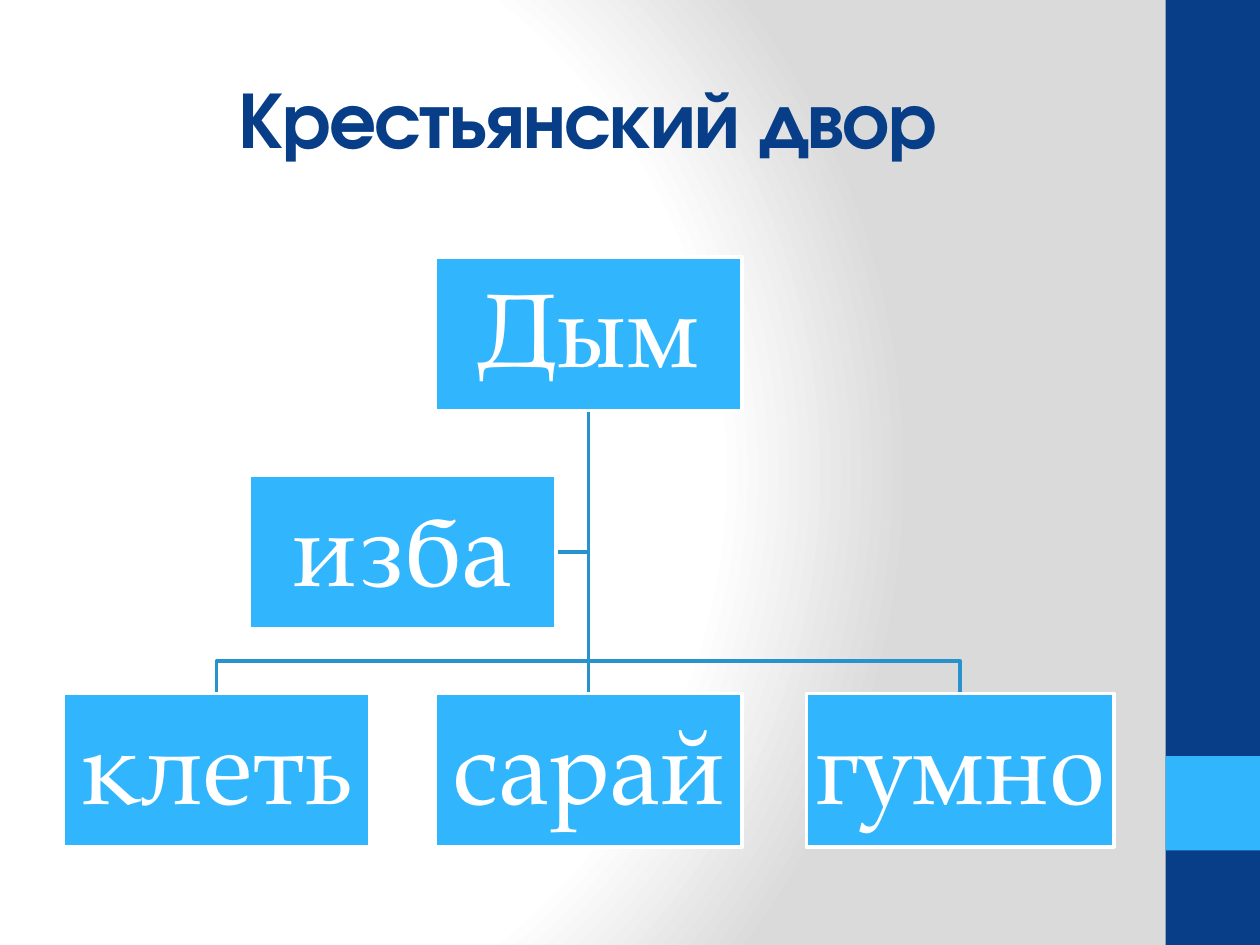
import pptx
import pptx.dml.color
import pptx.enum.shapes
import pptx.enum.text
import pptx.oxml
import pptx.oxml.ns
import pptx.util

Inches = pptx.util.Inches
Pt = pptx.util.Pt
RGBColor = pptx.dml.color.RGBColor

NAVY = RGBColor(0x07, 0x3E, 0x87)
SKY = RGBColor(0x31, 0xB6, 0xFD)
LINE_BLUE = RGBColor(0x27, 0x92, 0xCB)
WHITE = RGBColor(0xFF, 0xFF, 0xFF)
GREY = RGBColor(0xDA, 0xDA, 0xDA)

TITLE_FONT = "TeX Gyre Adventor"
BODY_FONT = "TeX Gyre Pagella"


def add_rectangle(page, left, top, width, height, color):
    box = page.shapes.add_shape(
        pptx.enum.shapes.MSO_SHAPE.RECTANGLE, left, top, width, height)
    box.shadow.inherit = False
    box.fill.solid()
    box.fill.fore_color.rgb = color
    box.line.fill.background()
    return box


def write_text(box, text, font_name, size, color):
    frame = box.text_frame
    frame.word_wrap = True
    frame.vertical_anchor = pptx.enum.text.MSO_ANCHOR.MIDDLE
    para = frame.paragraphs[0]
    para.text = text
    para.alignment = pptx.enum.text.PP_ALIGN.CENTER
    span = para.runs[0]
    span.font.name = font_name
    span.font.size = Pt(size)
    span.font.color.rgb = color
    return span


def fill_background(page):
    """Radial gradient, white on the left and grey outside."""
    page.background.fill.gradient()
    gradient = page.element.find(".//" + pptx.oxml.ns.qn("a:gradFill"))
    stops = "".join(
        f'<a:gs pos="{percent * 1000}"><a:srgbClr val="{color}"/></a:gs>'
        for percent, color in ((0, WHITE), (75, WHITE), (100, GREY)))
    radial = pptx.oxml.parse_xml(
        f'<a:gradFill {pptx.oxml.ns.nsdecls("a")} rotWithShape="1">'
        f'<a:gsLst>{stops}</a:gsLst><a:path path="circle">'
        '<a:fillToRect l="20000" t="50000" r="100000" b="50000"/>'
        '</a:path></a:gradFill>')
    gradient.getparent().replace(gradient, radial)


def add_side_band(page, left, top, width, height):
    add_rectangle(page, left, top, width, height, NAVY)
    add_rectangle(page, left, top + height - 2 * width, width, width, SKY)


def add_title(page, left, top, width, height):
    box = page.shapes.add_textbox(left, top, width, height)
    span = write_text(box, "Крестьянский двор", TITLE_FONT, 46, NAVY)
    span.font.bold = True
    span.font._element.set("spc", "-100")


def add_node(page, text, left, top, width, height):
    box = add_rectangle(page, left, top, width, height, SKY)
    box.line.color.rgb = WHITE
    box.line.width = Pt(2)
    frame = box.text_frame
    frame.margin_left = frame.margin_right = Inches(0.04)
    frame.margin_top = frame.margin_bottom = Inches(0.04)
    write_text(box, text, BODY_FONT, 60, WHITE)
    frame.paragraphs[0].line_spacing = 0.9
    return box


def style_line(shape):
    shape.line.color.rgb = LINE_BLUE
    shape.line.width = Pt(2)


def add_branch(page, start, *points):
    builder = page.shapes.build_freeform(*start)
    builder.add_line_segments(points, close=False)
    branch = builder.convert_to_shape()
    branch.shadow.inherit = False
    branch.fill.background()
    style_line(branch)


def add_trunk(page, parent, child):
    trunk = page.shapes.add_connector(
        pptx.enum.shapes.MSO_CONNECTOR.STRAIGHT, 0, 0, 0, 0)
    trunk.begin_connect(parent, 2)
    trunk.end_connect(child, 0)
    style_line(trunk)
    trunk._element.spPr.append(pptx.oxml.parse_xml(
        f'<a:effectLst {pptx.oxml.ns.nsdecls("a")}/>'))


def add_tree(page, left, top, width):
    """Three rows: a root, an assistant left of the trunk, three children."""
    node_width = int(width / 3.42)
    node_height = node_width // 2
    gap = int(node_width * 0.21)
    row_step = node_height + gap
    center = left + width // 2
    size = (node_width, node_height)

    # Nodes
    root = add_node(page, "Дым", center - node_width // 2, top, *size)
    children = [
        add_node(page, text, left + i * (node_width + gap),
                 top + 2 * row_step, *size)
        for i, text in enumerate(("клеть", "сарай", "гумно"))]
    assistant = add_node(page, "изба", center - gap // 2 - node_width,
                         top + row_step, *size)

    # Lines
    start = (center, top + node_height)
    middle = assistant.top + node_height // 2
    add_branch(page, start, (center, middle),
               (assistant.left + node_width, middle))
    for child in (children[0], children[2]):
        child_center = child.left + node_width // 2
        bend = child.top - gap // 2
        add_branch(page, start, (center, bend), (child_center, bend),
                   (child_center, child.top))
    add_trunk(page, root, children[1])

    # Nodes lie in front of the lines
    for node in (root, *children, assistant):
        page.shapes.element.append(node.element)


def main():
    deck = pptx.Presentation()
    deck.slide_width = Inches(10)
    deck.slide_height = Inches(7.5)
    page = deck.slides.add_slide(deck.slide_layouts[6])
    fill_background(page)
    add_side_band(page, Inches(9.25), 0, Inches(0.75), Inches(7.5))
    add_title(page, Inches(0.5), Inches(0.3), Inches(8.33), Inches(1.25))
    add_tree(page, Inches(0.5), Inches(2.04), Inches(8.34))
    deck.save("out.pptx")


if __name__ == "__main__":
    main()
